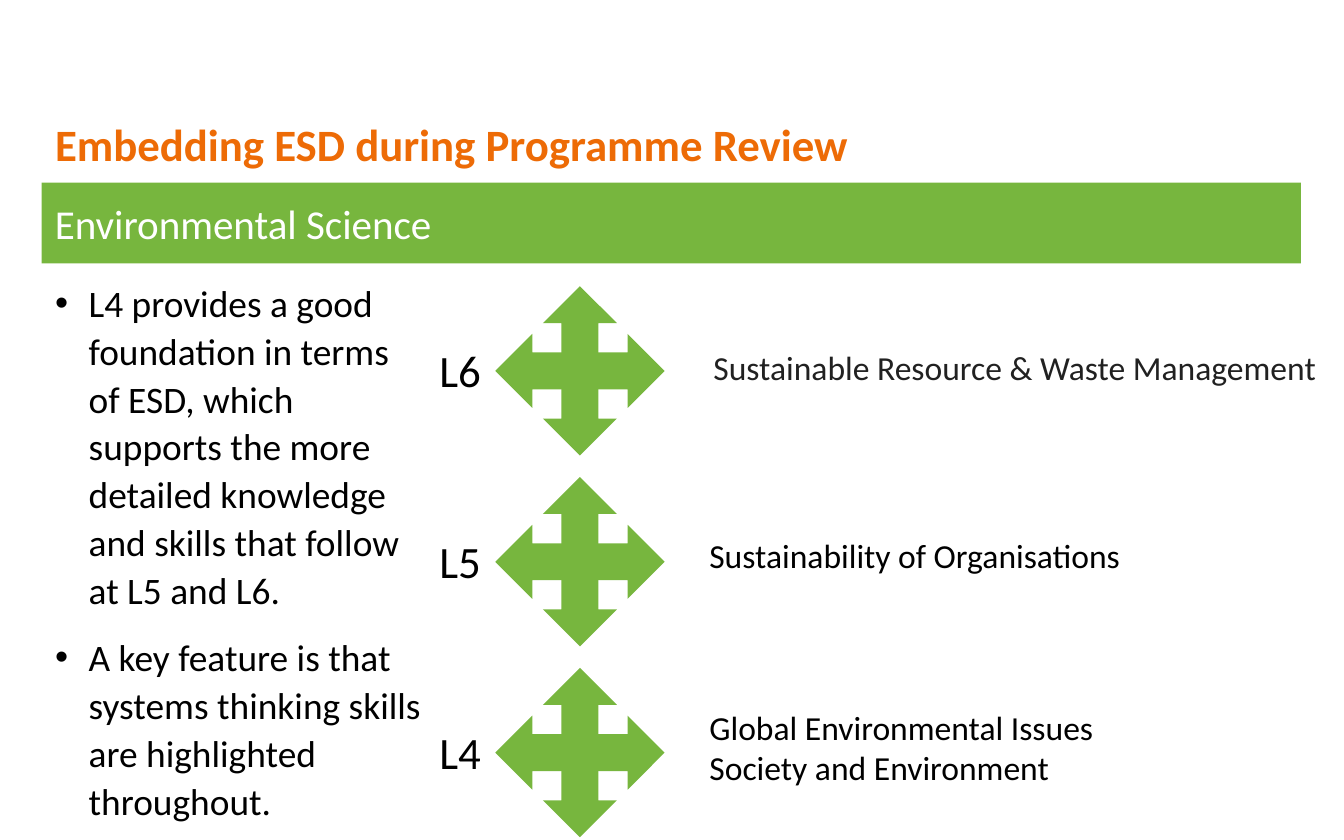
import pptx
import pptx.dml.color
import pptx.enum.shapes
import pptx.enum.text
import pptx.oxml.ns
import pptx.util
from lxml import etree

Inches = pptx.util.Inches
Pt = pptx.util.Pt
RGBColor = pptx.dml.color.RGBColor
Shape = pptx.enum.shapes.MSO_SHAPE
Align = pptx.enum.text.PP_ALIGN
Anchor = pptx.enum.text.MSO_ANCHOR
Fit = pptx.enum.text.MSO_AUTO_SIZE

GREEN = RGBColor(0x77, 0xB6, 0x3E)
ORANGE = RGBColor(0xED, 0x6B, 0x06)
WHITE = RGBColor(0xFF, 0xFF, 0xFF)
BLACK = RGBColor(0, 0, 0)
GREY = RGBColor(0x21, 0x21, 0x21)

BULLETS = [
    "L4 provides a good foundation in terms of ESD, which supports the more "
    "detailed knowledge and skills that follow at L5 and L6.",
    "A key feature is that systems thinking skills are highlighted throughout.",
]
LEVELS = [
    ("L6", ["Sustainable Resource & Waste Management"], GREY, (5.21, 2.53, 4.74, 0.4)),
    ("L5", ["Sustainability of Organisations"], BLACK, (5.18, 3.93, 3.4, 0.44)),
    ("L4", ["Global Environmental Issues", "Society and Environment"], BLACK,
     (5.18, 5.21, 3.12, 0.74)),
]


class Page:
    font = "Calibri"

    def __init__(self, deck):
        self.slide = deck.slides.add_slide(deck.slide_layouts[1])

    def style(self, para, size, color, bold=False):
        para.alignment = Align.LEFT
        para.font.name = self.font
        para.font.size = Pt(size)
        para.font.bold = bold
        para.font.color.rgb = color

    def fill(self, frame, lines, size, color, bold=False):
        frame.text = "\n".join(lines)
        for para in frame.paragraphs:
            self.style(para, size, color, bold)

    def place(self, holder, box):
        holder.left, holder.top, holder.width, holder.height = map(Inches, box)
        frame = holder.text_frame
        frame.auto_size = Fit.NONE
        frame.word_wrap = True
        frame.vertical_anchor = Anchor.MIDDLE
        return frame

    def title(self, text, box):
        frame = self.place(self.slide.shapes.title, box)
        self.fill(frame, [text], 24, ORANGE, True)
        frame.paragraphs[0].line_spacing = 0.9

    def list(self, lines, box):
        frame = self.place(self.slide.placeholders[1], box)
        frame.text = "\n".join(lines)
        for i, para in enumerate(frame.paragraphs):
            props = para._p.get_or_add_pPr()
            props.set("marL", str(Inches(0.25)))
            props.set("indent", str(Inches(-0.25)))
            mark = etree.SubElement(props, pptx.oxml.ns.qn("a:buChar"))
            mark.set("char", "•")
            para.line_spacing = 1.07
            para.space_before = Pt(10 if i else 0)
            self.style(para, 20, BLACK)

    def shape(self, kind, box, adjust):
        item = self.slide.shapes.add_shape(kind, *map(Inches, box))
        item.shadow.inherit = False
        item.fill.solid()
        item.fill.fore_color.rgb = GREEN
        item.line.fill.background()
        for i, value in enumerate(adjust):
            item.adjustments[i] = value
        return item

    def band(self, text, box):
        frame = self.shape(Shape.ROUNDED_RECTANGLE, box, [0]).text_frame
        frame.vertical_anchor = Anchor.MIDDLE
        self.fill(frame, [text], 22, WHITE)

    def cross(self, left, top):
        for turn in (0, 90):
            arrow = self.shape(Shape.UP_DOWN_ARROW, (left, top, 0.55, 1.26), [0.392, 0.5])
            arrow.rotation = turn

    def label(self, lines, box, size, color):
        frame = self.slide.shapes.add_textbox(*map(Inches, box)).text_frame
        frame.word_wrap = False
        frame.auto_size = Fit.SHAPE_TO_FIT_TEXT
        self.fill(frame, lines, size, color)


def main():
    deck = pptx.Presentation()
    deck.slide_width = Inches(10)
    deck.slide_height = Inches(6.25)
    page = Page(deck)
    page.title("Embedding ESD during Programme Review", (0.31, 0.86, 8.62, 0.46))
    page.band("Environmental Science", (0.31, 1.36, 9.37, 0.6))
    page.list(BULLETS, (0.31, 2.08, 2.94, 4.02))
    for i, (level, topics, color, box) in enumerate(LEVELS):
        top = 2.13 + 1.42 * i
        page.cross(4.04, top)
        page.label([level], (3.17, top + 0.37, 0.51, 0.5), 24, BLACK)
        page.label(topics, box, 18, color)
    deck.save("out.pptx")


if __name__ == "__main__":
    main()
